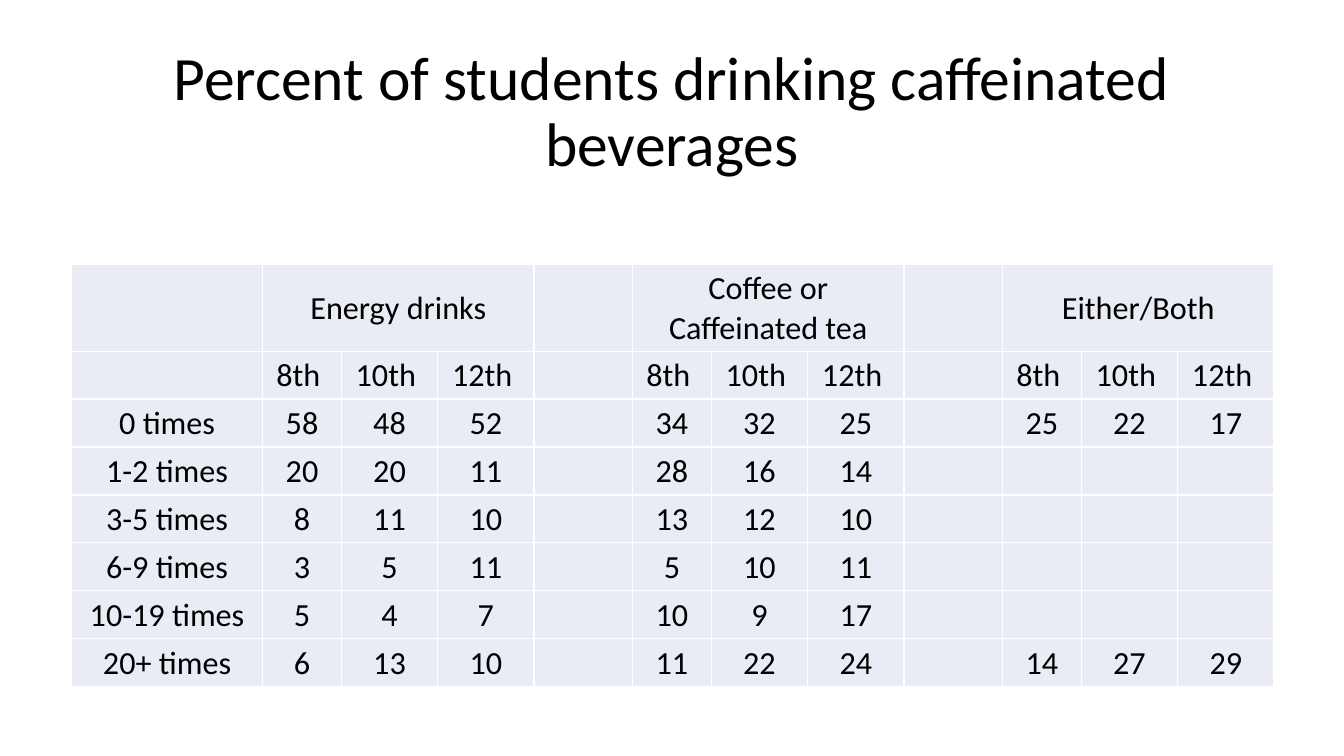
from pptx import Presentation
from pptx.dml.color import RGBColor as RGB
from pptx.enum.text import MSO_ANCHOR as Anchor, PP_ALIGN as Align
from pptx.oxml import parse_xml
from pptx.oxml.ns import nsdecls
from pptx.util import Pt

HUES = {"text": "000000", "cell": "E9EBF5", "rule": "FFFFFF"}
FONT = "Calibri"


def write(para, text, size):
    para.alignment = Align.CENTER
    run = para.add_run()
    run.text = text
    run.font.size = Pt(size)
    run.font.name = FONT
    run.font.color.rgb = RGB.from_string(HUES["text"])


def style(cell):
    props = cell._tc.get_or_add_tcPr()
    for side in "LRTB":
        props.append(parse_xml(
            f'<a:ln{side} {nsdecls("a")} w="12700"><a:solidFill>'
            f'<a:srgbClr val="{HUES["rule"]}"/></a:solidFill></a:ln{side}>'))
    cell.fill.solid()
    cell.fill.fore_color.rgb = RGB.from_string(HUES["cell"])
    cell.vertical_anchor = Anchor.MIDDLE
    cell.margin_left = cell.margin_right = cell.margin_top = Pt(0.7)
    cell.margin_bottom = Pt(0)


deck = Presentation()
deck.slide_width, deck.slide_height = Pt(960), Pt(540)
slide = deck.slides.add_slide(deck.slide_layouts[6])

# Title
box = slide.shapes.add_textbox(Pt(66), Pt(28.75), Pt(828), Pt(104.4))
frame = box.text_frame
frame.word_wrap = True
frame.vertical_anchor = Anchor.MIDDLE
title = frame.paragraphs[0]
title.line_spacing = 0.9
write(title, "Percent of students drinking caffeinated beverages", 44)

# Table content: a label, then three groups of grades with gaps between
grades = ["8th ", "10th ", "12th "]
none = [""] * 3
rows = [
    ("", ["Energy drinks", "", ""], ["Coffee or Caffeinated tea", "", ""],
     ["Either/Both", "", ""]),
    ("", grades, grades, grades),
    ("0 times", [58, 48, 52], [34, 32, 25], [25, 22, 17]),
    ("1-2 times", [20, 20, 11], [28, 16, 14], none),
    ("3-5 times", [8, 11, 10], [13, 12, 10], none),
    ("6-9 times", [3, 5, 11], [5, 10, 11], none),
    ("10-19 times", [5, 4, 7], [10, 9, 17], none),
    ("20+ times", [6, 13, 10], [11, 22, 24], [14, 27, 29]),
]
group = [56.2, 68.8, 68.8]
gap = [70.5]
wide = [136.5] + group + gap + group + gap + group
high = [61.8] + [34.25] * 7

# Table frame
table = slide.shapes.add_table(len(high), len(wide), Pt(51.2), Pt(189),
                               Pt(sum(wide)), Pt(sum(high))).table
table.first_row = table.horz_banding = False
for col, width in zip(table.columns, wide):
    col.width = Pt(width)
for row, height in zip(table.rows, high):
    row.height = Pt(height)

# Cells
for r, (label, energy, coffee, both) in enumerate(rows):
    for c, text in enumerate([label, *energy, "", *coffee, "", *both]):
        cell = table.cell(r, c)
        style(cell)
        if text != "":
            write(cell.text_frame.paragraphs[0], str(text), 23)

# Group headings span three grades
for c in (1, 5, 9):
    table.cell(0, c).merge(table.cell(0, c + 2))

deck.save("out.pptx")
